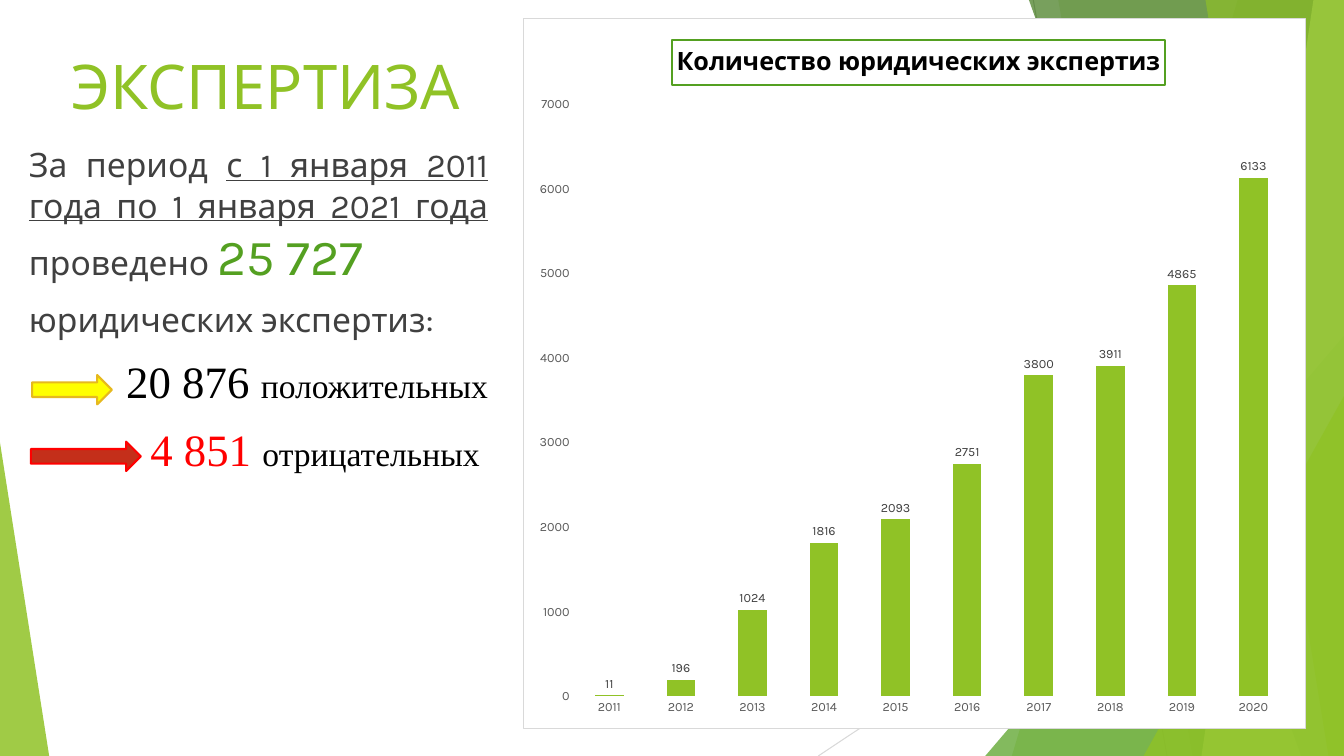
from lxml import etree
from pptx import Presentation
from pptx import oxml
from pptx.chart import data as chart_data
from pptx.dml import color
from pptx.enum import chart as charts, shapes, text
from pptx.oxml import ns
from pptx.util import Cm, Pt

COLORS = {
    "lime": "90C226", "green": "54A021", "forest": "3F7819", "pale": "C0E474",
    "text": "404040", "axis": "595959", "black": "000000", "white": "FFFFFF",
    "red": "FF0000", "brick": "C42F1A", "yellow": "FFFF00", "gold": "E6B91E",
    "silver": "BFBFBF", "border": "D9D9D9",
}
FONT, SERIF = "Karla", "Times New Roman"
SERIES = "Количество юридических экспертиз"
COUNTS = (11, 196, 1024, 1816, 2093, 2751, 3800, 3911, 4865, 6133)


def rgb(name):
    """Return the named palette colour."""
    return color.RGBColor.from_string(COLORS[name])


def format_font(font, size, ink, face=FONT, bold=False):
    """Set size, colour, typeface and weight of a font."""
    font.size, font.name, font.bold = Pt(size), face, bold
    font.color.rgb = rgb(ink)


def add_span(para, words, size=24, ink="text", face=FONT, underline=False):
    """Append formatted text to a paragraph."""
    span = para.add_run()
    span.text = words
    format_font(span.font, size, ink, face)
    span.font.underline = underline


def paint(shape, fill, line=None, opacity=100):
    """Fill and outline a shape without a shadow."""
    shape.shadow.inherit = False
    shape.fill.solid()
    shape.fill.fore_color.rgb = rgb(fill)
    if opacity < 100:
        tint = shape.fill._xPr.find(".//" + ns.qn("a:srgbClr"))
        etree.SubElement(tint, ns.qn("a:alpha"), val=str(opacity * 1000))
    if line:
        shape.line.color.rgb = rgb(line)
        shape.line.width = Pt(1.5)
    else:
        shape.line.fill.background()


def add_line(page, box, start, end, ink):
    """Draw a thin line between two points of the box."""
    left, top, _, _ = box
    line = page.shapes.add_connector(
        shapes.MSO_CONNECTOR.STRAIGHT,
        *(Cm(value) for value in (left + start[0], top + start[1], left + end[0], top + end[1])))
    line.line.color.rgb = rgb(ink)
    line.line.width = Pt(0.75)
    etree.SubElement(line._element.spPr, ns.qn("a:effectLst"))


def add_band(page, box, upper, lower, fill, opacity):
    """Fill the area from a slanted edge to the right side of the box."""
    left, top, width, height = box
    corners = ((upper, 0), (width, 0), (width, height), (lower, height))
    points = [(Cm(left + x), Cm(top + y)) for x, y in corners]
    builder = page.shapes.build_freeform(*points[0], scale=1.0)
    builder.add_line_segments(points[1:], close=True)
    paint(builder.convert_to_shape(), fill, opacity=opacity)


def add_wedge(page, box, width, height, apex, fill, opacity):
    """Place a right triangle in the lower left or lower right corner."""
    left, top, box_width, box_height = box
    wedge = page.shapes.add_shape(
        shapes.MSO_SHAPE.ISOSCELES_TRIANGLE, Cm(left + apex * (box_width - width)),
        Cm(top + box_height - height), Cm(width), Cm(height))
    wedge.adjustments[0] = apex
    paint(wedge, fill, opacity=opacity)


def add_backdrop(page, box):
    """Draw the translucent facets behind the content."""
    add_line(page, box, (26.04, 0), (29.41, 19.05), "silver")
    add_line(page, box, (33.87, 10.24), (20.62, 19.05), "border")
    add_band(page, box, 31.19, 25.5, "lime", 30)
    add_band(page, box, 26.67, 30.05, "lime", 20)
    add_wedge(page, box, 9.04, 10.59, 1, "green", 72)
    add_band(page, box, 25.93, 32.79, "forest", 70)
    add_band(page, box, 33.1, 30.28, "pale", 70)
    add_band(page, box, 30.38, 33.48, "lime", 65)
    add_wedge(page, box, 5.05, 9.07, 1, "lime", 80)
    add_wedge(page, box, 1.24, 7.9, 0, "lime", 85)


def add_title(page, box):
    """Place the slide title."""
    title = page.shapes.title
    title.left, title.top, title.width, title.height = map(Cm, box)
    frame = title.text_frame
    frame.vertical_anchor = text.MSO_ANCHOR.BOTTOM
    frame.paragraphs[0].alignment = text.PP_ALIGN.CENTER
    add_span(frame.paragraphs[0], "ЭКСПЕРТИЗА", 44, "lime")


def add_summary(page, box):
    """Write the totals and point an arrow at each result."""
    left, top, _, _ = box
    frame = page.shapes.add_textbox(*map(Cm, box)).text_frame
    frame.word_wrap = True
    justify, right = text.PP_ALIGN.JUSTIFY, text.PP_ALIGN.RIGHT
    paras = [frame.paragraphs[0]] + [frame.add_paragraph() for _ in range(3)]
    for para, alignment in zip(paras, (justify, justify, right, right)):
        para.alignment = alignment
        para.space_before = Pt(10)
    period, subject, positive, negative = paras
    add_span(period, "За период ")
    add_span(period, "с 1 января 2011 года по 1 января 2021 года ", underline=True)
    add_span(period, "проведено ")
    add_span(period, "25 727", 36, "green")
    add_span(subject, "юридических экспертиз:")
    add_span(positive, "20 876 ", 32, "black", SERIF)
    add_span(positive, "положительных", 24, "black", SERIF)
    add_span(negative, "4 851 ", 32, "red", SERIF)
    add_span(negative, "отрицательных ", 24, "black", SERIF)
    for x, y, width, fill, line in ((0.33, 5.94, 2.01, "yellow", "gold"),
                                    (0.3, 7.62, 2.77, "brick", "red")):
        arrow = page.shapes.add_shape(
            shapes.MSO_SHAPE.RIGHT_ARROW, Cm(left + x), Cm(top + y), Cm(width), Cm(0.74))
        paint(arrow, fill, line)


def set_layout(parent, index, **places):
    """Give a chart part a manual position in fractions of the chart."""
    for old in parent.findall(ns.qn("c:layout")):
        parent.remove(old)
    layout = etree.Element(ns.qn("c:layout"))
    manual = etree.SubElement(layout, ns.qn("c:manualLayout"))
    if "w" in places:
        etree.SubElement(manual, ns.qn("c:layoutTarget"), val="inner")
    for mode in ("xMode", "yMode"):
        etree.SubElement(manual, ns.qn("c:" + mode), val="edge")
    for key, value in places.items():
        etree.SubElement(manual, ns.qn("c:" + key), val=str(value))
    parent.insert(index, layout)


def add_counts_chart(page, box):
    """Chart the yearly number of examinations."""
    table = chart_data.CategoryChartData()
    table.categories = [str(2011 + step) for step in range(len(COUNTS))]
    table.add_series(SERIES, COUNTS)
    chart = page.shapes.add_chart(
        charts.XL_CHART_TYPE.COLUMN_CLUSTERED, *map(Cm, box), table).chart
    format_font(chart.font, 10, "black")
    chart.has_legend = False
    chart.has_title = True
    title = chart.chart_title
    span = title.text_frame.paragraphs[0].add_run()
    span.text = SERIES
    format_font(span.font, 18, "black", bold=True)
    title.format.fill.solid()
    title.format.fill.fore_color.rgb = rgb("white")
    title.format.line.color.rgb = rgb("green")
    title.format.line.width = Pt(1.5)

    for axis in (chart.category_axis, chart.value_axis):
        axis.has_major_gridlines = False
        axis.major_tick_mark = axis.minor_tick_mark = charts.XL_TICK_MARK.NONE
        axis.format.line.fill.background()
        format_font(axis.tick_labels.font, 9, "axis")
    chart.value_axis.minimum_scale, chart.value_axis.maximum_scale = 0, 7000
    chart.value_axis.major_unit = 1000
    plot = chart.plots[0]
    plot.gap_width, plot.vary_by_categories = 150, False
    bars = plot.series[0]
    bars.format.fill.solid()
    bars.format.fill.fore_color.rgb = rgb("lime")
    labels = bars.data_labels
    labels.show_value = True
    labels.position = charts.XL_LABEL_POSITION.OUTSIDE_END
    format_font(labels.font, 9, "text")

    body = chart.element.find(ns.qn("c:chart"))
    set_layout(body.find(ns.qn("c:title")), 1, x=0.19, y=0.03)
    set_layout(body.find(ns.qn("c:plotArea")), 0, x=0.064, y=0.121, w=0.915, h=0.834)
    body.addnext(oxml.parse_xml(
        f'<c:spPr {ns.nsdecls("c", "a")}><a:solidFill><a:srgbClr val="{COLORS["white"]}"/>'
        f'</a:solidFill><a:ln w="9525"><a:solidFill><a:srgbClr val="{COLORS["border"]}"/>'
        '</a:solidFill></a:ln></c:spPr>'))


def main():
    """Build and save the deck."""
    deck = Presentation()
    deck.slide_width, deck.slide_height = Cm(33.87), Cm(19.05)
    page = deck.slides.add_slide(deck.slide_layouts.get_by_name("Title Only"))
    add_backdrop(page, (0, 0, 33.87, 19.05))
    add_title(page, (1.35, 0.81, 10.72, 2.39))
    add_summary(page, (0.48, 3.51, 12.07, 11.56))
    add_counts_chart(page, (13.18, 0.46, 19.74, 17.91))
    deck.save("out.pptx")


if __name__ == "__main__":
    main()
